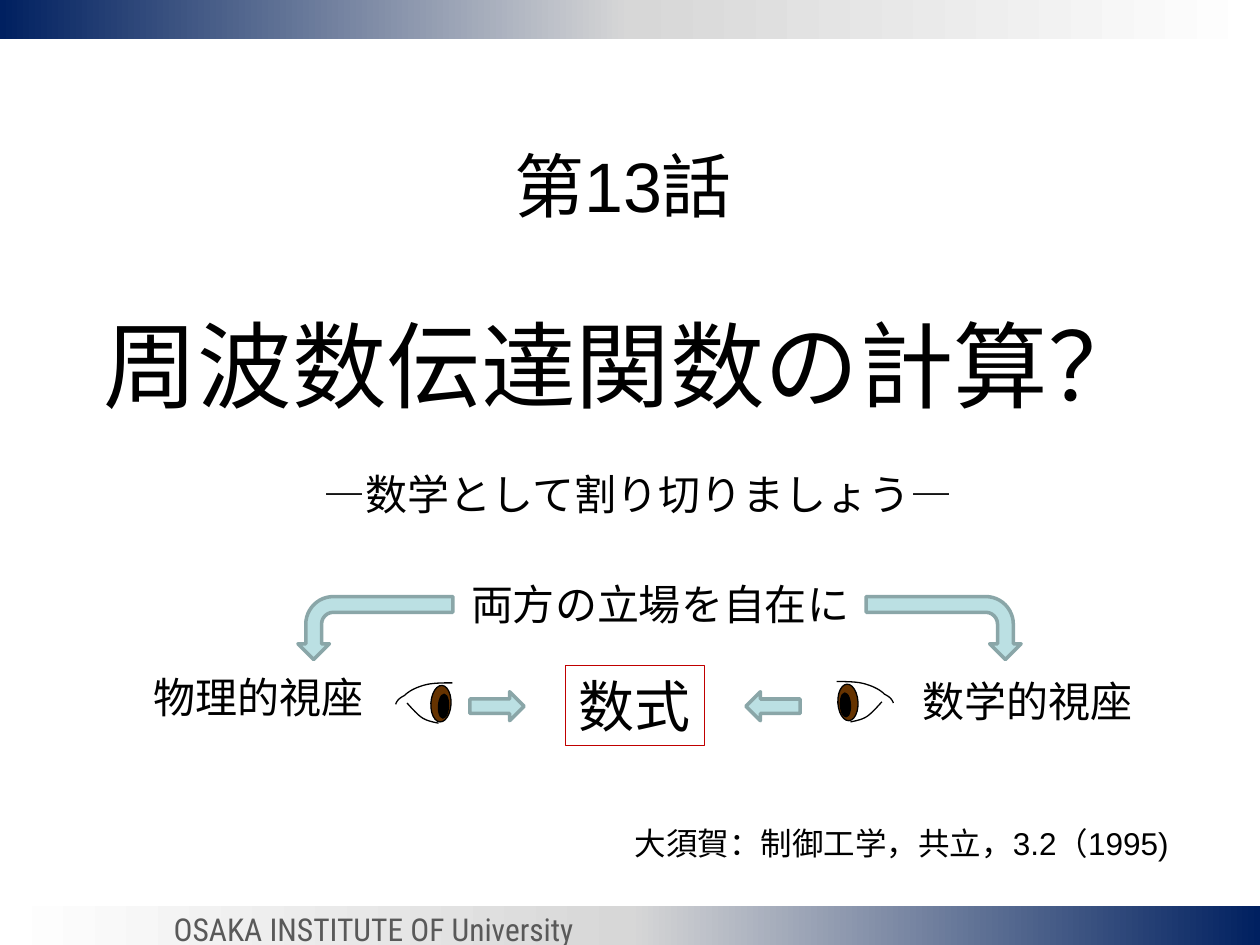
"""Build the title slide for lecture 13 on the frequency transfer function."""
from typing import NamedTuple

from lxml.etree import SubElement
from pptx import Presentation
from pptx.dml.color import RGBColor
from pptx.enum.shapes import MSO_SHAPE
from pptx.enum.text import MSO_ANCHOR, MSO_AUTO_SIZE, PP_ALIGN
from pptx.oxml.ns import qn
from pptx.util import Inches, Pt

COLORS = {
    "navy": "002060", "silver": "D7D7D7", "white": "FFFFFF", "black": "000000",
    "footer": "595959", "frame": "C00000", "iris": "663300",
    "arrow": "BBE0E3", "arrow_edge": "8AA6A8",
}
WIDTH, HEIGHT = Inches(10), Inches(7.5)
COLUMN, ROW = WIDTH / 100, HEIGHT / 75
MIRROR_COLUMNS = 102.3
CURVE_STEPS = 8


class Box(NamedTuple):
    left: float
    top: float
    width: float
    height: float

    def place(self) -> tuple:
        return (round(self.left * COLUMN), round(self.top * ROW),
                round(self.width * COLUMN), round(self.height * ROW))


class Label(NamedTuple):
    text: str
    box: Box
    size: int = 24
    font: str = "Arial"
    color: str = "black"
    wrap: bool = False


class Piece(NamedTuple):
    kind: MSO_SHAPE
    box: Box
    fill: str
    edge: str
    edge_width: float
    rotation: float = 0
    flips: tuple = ()


class Curve(NamedTuple):
    start: tuple
    segments: tuple


LABELS = (
    Label("OSAKA INSTITUTE OF University", Box(12.8, 71.7, 38.8, 4), 18,
          "Roboto Condensed", "footer"),
    Label("大須賀：制御工学，共立，3.2（1995)", Box(49.4, 64.9, 44.8, 4), 18, wrap=True),
    Label("—数学として割り切りましょう—", Box(24.7, 36.7, 52.5, 5)),
    Label("物理的視座", Box(11.2, 52.8, 18.8, 5)),
    Label("数学的視座", Box(72.2, 53.1, 18.8, 5)),
    Label("両方の立場を自在に", Box(36.4, 45.4, 32.3, 5)),
)
FORMULA = Label("数式", Box(44.9, 52.8, 11, 6.4), 32)
ARROW_STYLE = ("arrow", "arrow_edge", 2)
ARROWS = (
    Piece(MSO_SHAPE.RIGHT_ARROW, Box(37.3, 54.9, 4.3, 2.3), *ARROW_STYLE),
    Piece(MSO_SHAPE.RIGHT_ARROW, Box(59.2, 54.9, 4.3, 2.3), *ARROW_STYLE, 180),
    Piece(MSO_SHAPE.BENT_ARROW, Box(27.3, 43.7, 5, 12.3), *ARROW_STYLE, 90, ("flipV",)),
    Piece(MSO_SHAPE.BENT_ARROW, Box(72.4, 43.7, 5, 12.3), *ARROW_STYLE, 270,
          ("flipH", "flipV")),
)
EYELIDS = (
    Curve((35.9, 54.2), (
        ((35.1, 54.2), (34.2, 54.2), (33.6, 54.4)),
        ((32.9, 54.6), (32.4, 54.9), (32.1, 55.2)),
        ((31.7, 55.4), (31.5, 55.6), (31.4, 55.9)))),
    Curve((34.8, 57.4), (
        ((34.3, 57.3), (33.8, 57.2), (33.4, 56.9)),
        ((33, 56.6), (32.5, 56), (32.3, 55.8)))),
)
EYEBALL = ((Box(34.2, 54.4, 1.6, 2.9), "iris"), (Box(34.8, 55.1, 0.8, 1.9), "black"))


def rgb(name: str) -> RGBColor:
    return RGBColor.from_string(COLORS[name])


def add_run(paragraph, text: str, size: int, font: str = "Arial", color: str = "black") -> None:
    run = paragraph.add_run()
    run.text = text
    run.font.size, run.font.name = Pt(size), font
    run.font.color.rgb = rgb(color)


def write_label(shape, label: Label) -> None:
    frame = shape.text_frame
    frame.word_wrap = label.wrap
    frame.vertical_anchor = MSO_ANCHOR.TOP
    paragraph = frame.paragraphs[0]
    paragraph.alignment = PP_ALIGN.LEFT
    add_run(paragraph, label.text, label.size, label.font, label.color)


def add_bar(slide, box: Box, rotation: int) -> None:
    bar = slide.shapes.add_shape(MSO_SHAPE.RECTANGLE, *box.place())
    bar.shadow.inherit = False
    bar.line.fill.background()
    bar.rotation = rotation
    bar.fill.gradient()
    bar.fill.gradient_angle = 0
    stops = bar.fill._fill._gradFill.find(qn("a:gsLst"))
    for stop in list(stops):
        stops.remove(stop)
    for position, name in ((0, "navy"), (50, "silver"), (100, "white")):
        stop = SubElement(stops, qn("a:gs"), pos=str(position * 1000))
        SubElement(stop, qn("a:srgbClr"), val=COLORS[name])


def add_piece(slide, piece: Piece) -> None:
    shape = slide.shapes.add_shape(piece.kind, *piece.box.place())
    shape.shadow.inherit = False
    shape.fill.solid()
    shape.fill.fore_color.rgb = rgb(piece.fill)
    shape.line.color.rgb = rgb(piece.edge)
    shape.line.width = Pt(piece.edge_width)
    shape.rotation = piece.rotation
    for flip in piece.flips:
        shape._element.spPr.find(qn("a:xfrm")).set(flip, "1")


def curve_points(curve: Curve) -> list:
    points, start = [curve.start], curve.start
    for first, second, end in curve.segments:
        for step in range(1, CURVE_STEPS + 1):
            t = step / CURVE_STEPS
            weights = ((1 - t) ** 3, 3 * t * (1 - t) ** 2, 3 * t * t * (1 - t), t ** 3)
            corners = (start, first, second, end)
            points.append(tuple(sum(weight * corner[axis] for weight, corner
                                    in zip(weights, corners)) for axis in (0, 1)))
        start = end
    return points


def add_eye(slide, mirrored: bool) -> None:
    lift = 0.1 if mirrored else 0
    for curve in EYELIDS:
        points = [(round((MIRROR_COLUMNS - x if mirrored else x) * COLUMN),
                   round((y - lift) * ROW)) for x, y in curve_points(curve)]
        builder = slide.shapes.build_freeform(*points[0])
        builder.add_line_segments(points[1:], close=False)
        lid = builder.convert_to_shape()
        lid.shadow.inherit = False
        lid.fill.background()
        lid.line.color.rgb = rgb("black")
        lid.line.width = Pt(0.75)
    for box, fill in EYEBALL:
        left = MIRROR_COLUMNS - box.left - box.width if mirrored else box.left
        add_piece(slide, Piece(MSO_SHAPE.OVAL, box._replace(left=left, top=box.top - lift),
                               fill, "black", 0.75, 356.8 if mirrored else 3.2))


def fill_title(slide) -> None:
    title = slide.shapes.title
    title.left, title.top, title.width, title.height = Box(6.8, 10.8, 85.3, 23.6).place()
    frame = title.text_frame
    frame.auto_size = MSO_AUTO_SIZE.NONE
    frame.word_wrap = True
    frame.vertical_anchor = MSO_ANCHOR.TOP
    heading, subject = frame.paragraphs[0], frame.add_paragraph()
    add_run(heading, "第13話", 40)
    add_run(subject, "周波数伝達関数の計算？", 54)
    subject.space_before = Pt(46)
    for paragraph in (heading, subject):
        paragraph.alignment = PP_ALIGN.CENTER


def main() -> None:
    presentation = Presentation()
    presentation.slide_width, presentation.slide_height = WIDTH, HEIGHT
    slide = presentation.slides.add_slide(presentation.slide_layouts[5])
    add_bar(slide, Box(0, 71.9, 100, 3.1), 180)
    add_bar(slide, Box(0, 0, 100, 3.1), 0)
    fill_title(slide)
    for label in LABELS:
        write_label(slide.shapes.add_textbox(*label.box.place()), label)
    formula = slide.shapes.add_shape(MSO_SHAPE.RECTANGLE, *FORMULA.box.place())
    formula.shadow.inherit = False
    formula.fill.background()
    formula.line.color.rgb = rgb("frame")
    formula.line.width = Pt(0.75)
    write_label(formula, FORMULA)
    for mirrored in (False, True):
        add_eye(slide, mirrored)
    for arrow in ARROWS:
        add_piece(slide, arrow)
    presentation.save("out.pptx")


if __name__ == "__main__":
    main()
